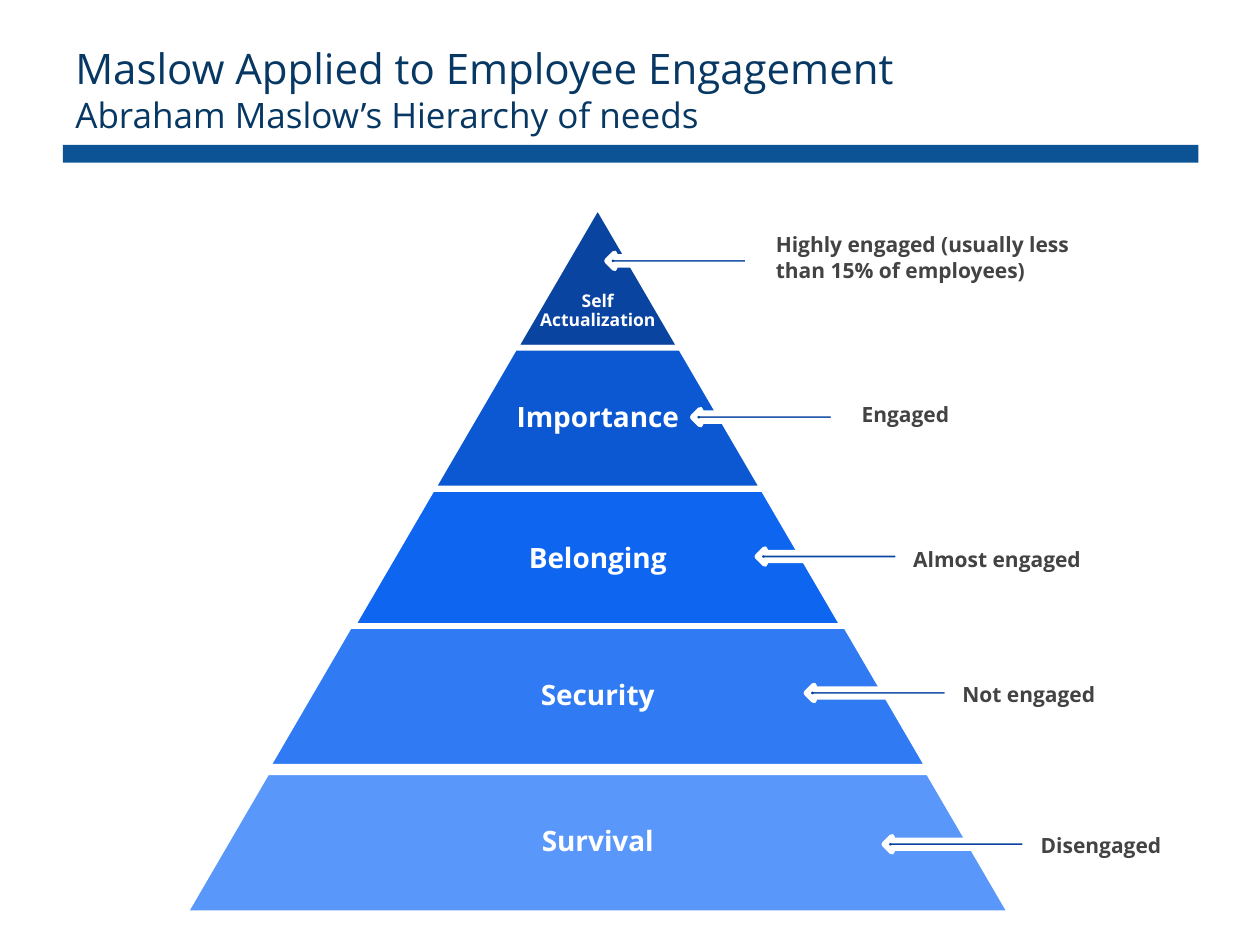
"""Build a slide that maps Maslow's pyramid to employee engagement."""
import pptx
import pptx.util
import pptx.dml.color
import pptx.enum.shapes
import pptx.enum.text

Cm = pptx.util.Cm
Pt = pptx.util.Pt
Kind = pptx.enum.shapes.MSO_SHAPE
Align = pptx.enum.text.PP_ALIGN
Anchor = pptx.enum.text.MSO_ANCHOR

FONT = "Open Sans"
HEADS = [
    ("Maslow Applied to Employee Engagement", 24),
    ("Abraham Maslow’s Hierarchy of needs", 20),
]
LEVELS = [
    {"name": "Self Actualization", "size": 10, "fill": "0944A1", "top": 4.17, "drop": 0.68,
     "arrow": (12.24, 5.11), "note": "Highly engaged (usually less than 15% of employees)",
     "spot": (15.39, 4.55, 1.27)},
    {"name": "Importance", "size": 16, "fill": "0C58D3", "top": 7.01, "drop": 0,
     "arrow": (13.97, 8.26), "note": "Engaged", "spot": (17.12, 7.98, 0.76)},
    {"name": "Belonging", "size": 16, "fill": "0E65F0", "top": 9.86, "drop": 0,
     "arrow": (15.27, 11.07), "note": "Almost engaged", "spot": (18.16, 10.9, 0.76)},
    {"name": "Security", "size": 16, "fill": "307BF3", "top": 12.62, "drop": 0,
     "arrow": (16.26, 13.82), "note": "Not engaged", "spot": (19.15, 13.61, 0.76)},
    {"name": "Survival", "size": 16, "fill": "5997FB", "top": 15.57, "drop": 0,
     "arrow": (17.83, 16.87), "note": "Disengaged", "spot": (20.73, 16.66, 0.76)},
]
MID, STEP, HIGH = 12.05, 3.33, 2.84


def color(code):
    return pptx.dml.color.RGBColor.from_string(code)


def draw(slide, kind, box, fill, edge=None):
    shape = slide.shapes.add_shape(kind, *map(Cm, box))
    shape.shadow.inherit = False
    shape.fill.solid()
    shape.fill.fore_color.rgb = color(fill)
    if edge:
        shape.line.color.rgb = color(edge)
        shape.line.width = Pt(3.35)
    else:
        shape.line.fill.background()
    return shape


def write(slide, box, lines, ink, bold=False, center=False):
    frame = slide.shapes.add_textbox(*map(Cm, box)).text_frame
    frame.word_wrap = True
    if center:
        frame.vertical_anchor = Anchor.MIDDLE
        frame.margin_left = frame.margin_right = Cm(0.05)
        frame.margin_top = frame.margin_bottom = Cm(0.05)
    for i, (text, size) in enumerate(lines):
        para = frame.add_paragraph() if i else frame.paragraphs[0]
        if center:
            para.alignment = Align.CENTER
            para.line_spacing = 0.9
        run = para.add_run()
        run.text = text
        run.font.name = FONT
        run.font.size = Pt(size)
        run.font.bold = bold
        run.font.color.rgb = color(ink)


def main():
    deck = pptx.Presentation()
    deck.slide_width, deck.slide_height = Cm(25.4), Cm(19.05)
    slide = deck.slides.add_slide(deck.slide_layouts[6])

    write(slide, (1.27, 0.74, 22.43, 2.34), HEADS, "073763")
    for rank, level in enumerate(LEVELS, 1):
        wide = STEP * rank
        block = draw(slide, Kind.TRAPEZOID, (MID - wide / 2, level["top"], wide, HIGH),
                     level["fill"], "FFFFFF")
        block.adjustments[0] = 0.583
        room = max(2.54, wide * 0.65)
        write(slide, (MID - room / 2, level["top"] + level["drop"], room, HIGH),
              [(level["name"], level["size"])], "FFFFFF", True, True)
    for level in LEVELS:
        draw(slide, Kind.LEFT_ARROW, (*level["arrow"], 2.84, 0.3), "0944A1", "FFFFFF")
        left, top, high = level["spot"]
        write(slide, (left, top, 6.58, high), [(level["note"], 12)], "434343", True)
    draw(slide, Kind.RECTANGLE, (1.27, 2.92, 22.89, 0.36), "0B5394")

    deck.save("out.pptx")


if __name__ == "__main__":
    main()
